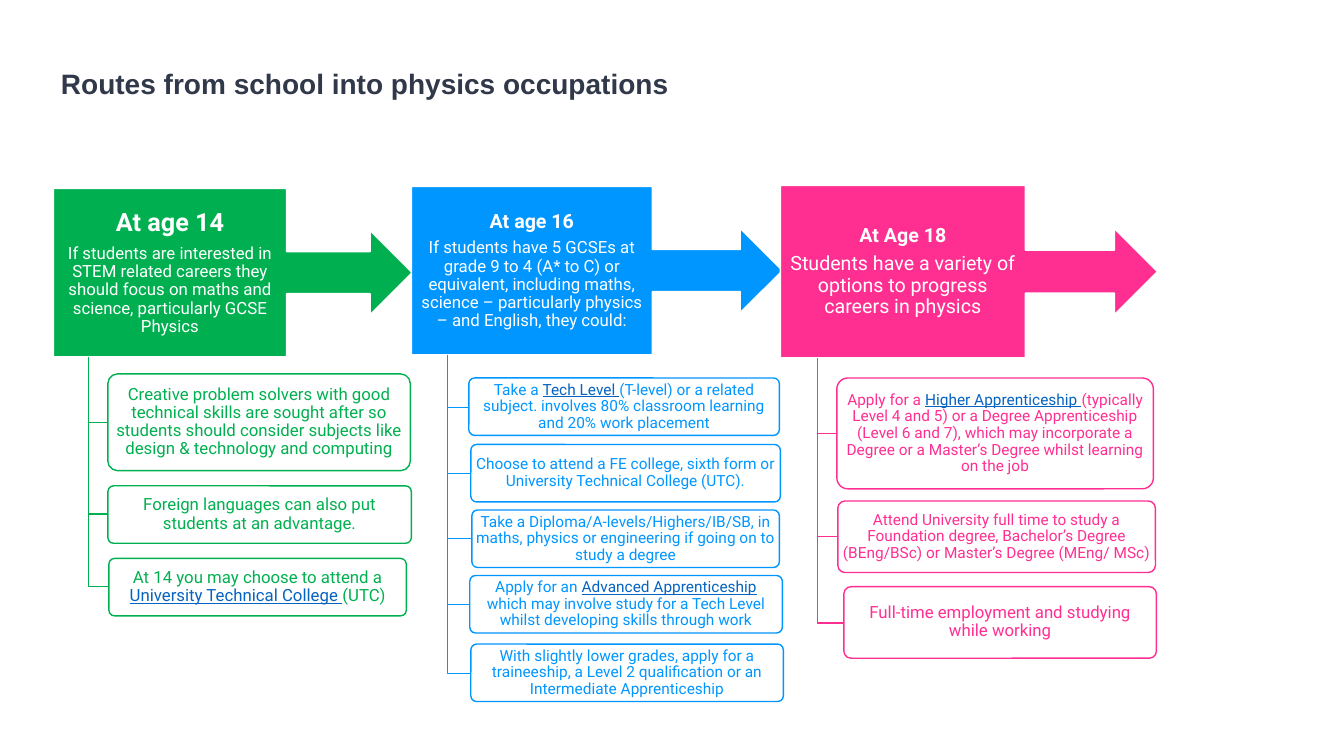
from lxml import etree
from pptx import Presentation
from pptx.dml.color import RGBColor
from pptx.enum.shapes import MSO_SHAPE
from pptx.enum.text import MSO_ANCHOR, MSO_AUTO_SIZE, PP_ALIGN
from pptx.oxml.ns import qn
from pptx.util import Pt

PX = 9144  # EMU per px, 100 px to the inch

CALLOUT = MSO_SHAPE.RIGHT_ARROW_CALLOUT
ROUND_RECT = MSO_SHAPE.ROUNDED_RECTANGLE
MIDDLE = MSO_ANCHOR.MIDDLE
CENTER = PP_ALIGN.CENTER
GROW = MSO_AUTO_SIZE.SHAPE_TO_FIT_TEXT

WHITE = RGBColor(0xFF, 0xFF, 0xFF)
GREEN = RGBColor(0x00, 0xB0, 0x50)
BLUE = RGBColor(0x00, 0x96, 0xFF)
PINK = RGBColor(0xFF, 0x2F, 0x92)
LINK = RGBColor(0x05, 0x63, 0xC1)
INK = RGBColor(0x30, 0x38, 0x49)

# Each stage: colour, callout box, heading and body with sizes, and its option
# cards (box, text size, text runs); the second run of a card is a link.
STAGES = [
    (GREEN, (53, 187, 356, 167), ("At age 14", 18),
     ("If students are interested in STEM related careers they should focus on "
      "maths and science, particularly GCSE Physics", 12),
     [((107, 371, 300, 96), 12,
       ["Creative problem solvers with good technical skills are sought after so "
        "students should consider subjects like design & technology and computing"]),
      ((107, 482, 301, 57), 12,
       ["Foreign languages can also put students at an advantage."]),
      ((108, 554, 295, 57), 12,
       ["At 14 you may choose to attend a ", "University Technical College ", "(UTC)"])]),
    (BLUE, (408, 185, 368, 167), ("At age 16", 14),
     ("If students have 5 GCSEs at grade 9 to 4 (A* to C) or equivalent, including "
      "maths, science – particularly physics – and English, they could:", 12),
     [((465, 375, 308, 57), 11,
       ["Take a ", "Tech Level ", "(T-level) or a related subject. involves 80% "
        "classroom learning and 20% work placement"]),
      ((467, 441, 307, 57), 11,
       ["Choose to attend a FE college, sixth form or University Technical College (UTC)."]),
      ((468, 506, 305, 57), 11,
       ["Take a Diploma/A-levels/Highers/IB/SB, in maths, physics or engineering "
        "if going on to study a degree"]),
      ((466, 571, 310, 57), 11,
       ["Apply for an ", "Advanced Apprenticeship ", "which may involve study for a "
        "Tech Level whilst developing skills through work"]),
      ((467, 639, 310, 57), 11,
       ["With slightly lower grades, apply for a traineeship, a Level 2 qualification "
        "or an Intermediate Apprenticeship"])]),
    (PINK, (774, 184, 374, 171), ("At Age 18", 14),
     ("Students have a variety of options to progress careers in physics", 14),
     [((830, 375, 314, 110), 11,
       ["Apply for a ", "Higher Apprenticeship ", "(typically Level 4 and 5) or a Degree "
        "Apprenticeship (Level 6 and 7), which may incorporate a Degree or a Master’s "
        "Degree whilst learning on the job"]),
      ((831, 497, 315, 71), 11,
       ["Attend University full time to study a Foundation degree, Bachelor’s Degree "
        "(BEng/BSc) or Master’s Degree (MEng/ MSc)"]),
      ((837, 582, 310, 71), 12,
       ["Full-time employment and studying while working"])]),
]


def emu(box):
    return [v * PX for v in box]


def add_run(p, text, color, **fmt):
    r = p.add_run()
    r.text = text
    for name, value in fmt.items():
        setattr(r.font, name, value)
    r.font.color.rgb = color


def center_paragraph(p, size):
    p.alignment = CENTER
    p.line_spacing = 0.9
    p.space_after = Pt(round(size * 0.35))


def add_box(slide, preset, box, fill, line, inset_x, inset_y):
    sp = slide.shapes.add_shape(preset, *emu(box))
    sp.shadow.inherit = False
    sp.fill.solid()
    sp.fill.fore_color.rgb = fill
    sp.line.color.rgb = line
    sp.line.width = Pt(1)
    tf = sp.text_frame
    fmt = {"margin_left": inset_x * PX, "margin_right": inset_x * PX,
           "margin_top": inset_y * PX, "margin_bottom": inset_y * PX,
           "word_wrap": True, "vertical_anchor": MIDDLE}
    for name, value in fmt.items():
        setattr(tf, name, value)
    return sp


def add_callout(slide, box, color, heading, body):
    tf = add_box(slide, CALLOUT, box, color, WHITE, 3, 2).text_frame
    for p, (text, size), bold in ((tf.paragraphs[0], heading, True),
                                  (tf.add_paragraph(), body, False)):
        center_paragraph(p, size)
        add_run(p, text, WHITE, name="Roboto", size=Pt(size), bold=bold)


def add_elbow(slide, x, top, box, color):
    left, y, _, h = box
    fb = slide.shapes.build_freeform(x, top, scale=PX)
    fb.add_line_segments([(x, y + h / 2), (left, y + h / 2)], close=False)
    sp = fb.convert_to_shape()
    sp.shadow.inherit = False
    sp.fill.background()
    sp.line.color.rgb = color
    sp.line.width = Pt(1)


def add_card(slide, box, color, size, runs):
    sp = add_box(slide, ROUND_RECT, box, WHITE, color, 2, 2)
    sp.adjustments[0] = 0.1
    # Fill at 90% opacity
    rgb = sp.fill._xPr.find(qn("a:solidFill"))[0]
    etree.SubElement(rgb, qn("a:alpha")).set("val", "90000")
    p = sp.text_frame.paragraphs[0]
    center_paragraph(p, size)
    for i, text in enumerate(runs):
        is_link = i == 1
        add_run(p, text, LINK if is_link else color,
                name="Roboto", size=Pt(size), underline=is_link)


def add_title(slide, text):
    tf = slide.shapes.add_textbox(*emu((48, 65, 628, 40))).text_frame
    tf.word_wrap = False
    tf.auto_size = GROW
    p = tf.paragraphs[0]
    p.alignment = CENTER
    p.line_spacing = 0.9
    add_run(p, text, INK, name="Arial", size=Pt(20), bold=True)


def main():
    prs = Presentation()
    prs.slide_width, prs.slide_height = 1333 * PX, 750 * PX
    slide = prs.slides.add_slide(prs.slide_layouts[6])

    # Stages, each with a trunk that branches to its cards
    for color, box, heading, body, cards in STAGES:
        add_callout(slide, box, color, heading, body)
        x, y, w, h = box
        for card_box, size, runs in cards:
            add_elbow(slide, x + w // 10, y + h, card_box, color)
            add_card(slide, card_box, color, size, runs)

    # Title
    add_title(slide, "Routes from school into physics occupations")
    prs.save("out.pptx")


if __name__ == "__main__":
    main()
